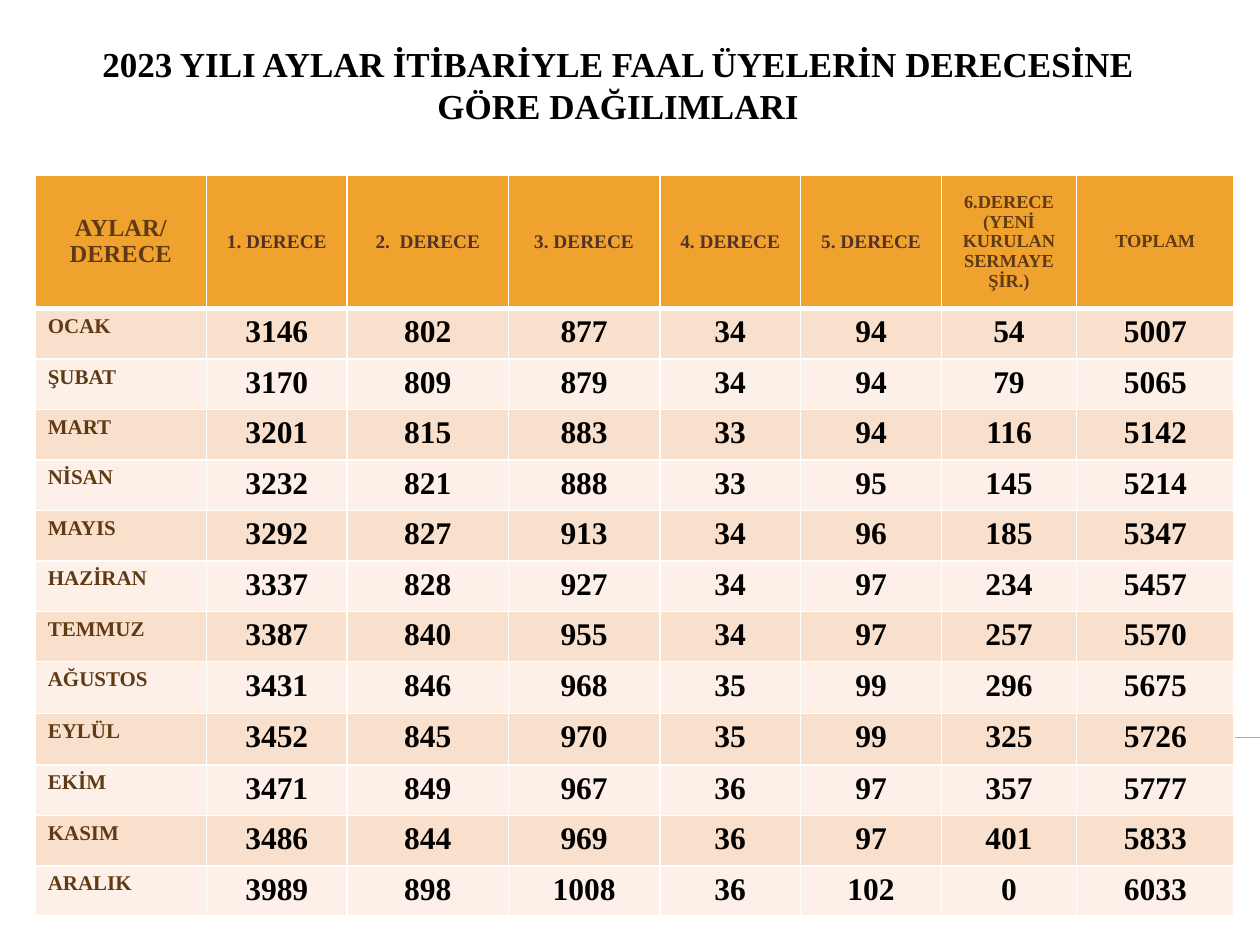
import pptx
import pptx.dml.color
import pptx.enum.shapes
import pptx.enum.text
import pptx.oxml
import pptx.oxml.ns
import pptx.util

Cm = pptx.util.Cm
Pt = pptx.util.Pt
ALIGN = pptx.enum.text.PP_ALIGN
ANCHOR = pptx.enum.text.MSO_ANCHOR

FONT = "Times New Roman"
ORANGE, BROWN, DARK_BROWN = "F0A22E", "603A14", "523227"
BLACK, WHITE = "000000", "FFFFFF"
BANDS = ("F9E0CD", "FCF0E8")

TITLE = "2023 YILI AYLAR İTİBARİYLE FAAL ÜYELERİN DERECESİNE GÖRE DAĞILIMLARI"
COL_WIDTHS = (3.45, 2.84, 3.25, 3.05, 2.84, 2.84, 2.72, 3.18)
HEADER_HEIGHT, ROW_HEIGHT, TALL_ROW_HEIGHT = 2.68, 0.98, 1.04
TALL_MONTHS = ("AĞUSTOS", "EYLÜL")
HEADERS = (
    ("AYLAR/ DERECE", 14, BROWN),
    ("1. DERECE", 11, DARK_BROWN),
    ("2.  DERECE", 11, DARK_BROWN),
    ("3. DERECE", 11, DARK_BROWN),
    ("4. DERECE", 11, DARK_BROWN),
    ("5. DERECE", 11, DARK_BROWN),
    ("6.DERECE (YENİ KURULAN SERMAYE ŞİR.)", 10.5, BROWN),
    ("TOPLAM", 10.5, BROWN),
)
MONTHS = (
    ("OCAK", 3146, 802, 877, 34, 94, 54, 5007),
    ("ŞUBAT", 3170, 809, 879, 34, 94, 79, 5065),
    ("MART", 3201, 815, 883, 33, 94, 116, 5142),
    ("NİSAN", 3232, 821, 888, 33, 95, 145, 5214),
    ("MAYIS", 3292, 827, 913, 34, 96, 185, 5347),
    ("HAZİRAN", 3337, 828, 927, 34, 97, 234, 5457),
    ("TEMMUZ", 3387, 840, 955, 34, 97, 257, 5570),
    ("AĞUSTOS", 3431, 846, 968, 35, 99, 296, 5675),
    ("EYLÜL", 3452, 845, 970, 35, 99, 325, 5726),
    ("EKİM", 3471, 849, 967, 36, 97, 357, 5777),
    ("KASIM", 3486, 844, 969, 36, 97, 401, 5833),
    ("ARALIK", 3989, 898, 1008, 36, 102, 0, 6033),
)


def rgb(color):
    """Turn a hex string into a colour."""
    return pptx.dml.color.RGBColor.from_string(color)


def write(tf, text, size, color, align, spacing=None):
    """Write one bold paragraph into a text frame."""
    p = tf.paragraphs[0]
    p.alignment = align
    if spacing:
        p.line_spacing = spacing
    r = p.add_run()
    r.text = text
    r.font.name = FONT
    r.font.size = Pt(size)
    r.font.bold = True
    r.font.color.rgb = rgb(color)


def add_rule(s, left, right, y):
    """Add the thin horizontal rule that runs behind the table."""
    cxn = s.shapes.add_connector(
        pptx.enum.shapes.MSO_CONNECTOR.STRAIGHT, Cm(left), Cm(y), Cm(right), Cm(y))
    cxn.line.color.rgb = rgb(ORANGE)
    cxn.line.width = Pt(0.75)
    pptx.oxml.ns.qn("a:effectLst")
    cxn._element.spPr.append(pptx.oxml.parse_xml(
        f'<a:effectLst {pptx.oxml.ns.nsdecls("a")}/>'))


def add_title(s):
    """Add the slide title."""
    sp = s.shapes.add_textbox(Cm(0.71), Cm(0.74), Cm(23.5), Cm(1.6))
    sp.text_frame.word_wrap = True
    write(sp.text_frame, TITLE, 20, BLACK, ALIGN.CENTER)


def style_cell(cell, fill, top=1, bottom=1):
    """Fill a cell and give it white borders, widths in points."""
    tcPr = cell._tc.get_or_add_tcPr()
    for side, width in (("L", 1), ("R", 1), ("T", top), ("B", bottom)):
        tcPr.append(pptx.oxml.parse_xml(
            f'<a:ln{side} {pptx.oxml.ns.nsdecls("a")} w="{Pt(width)}">'
            f'<a:solidFill><a:srgbClr val="{WHITE}"/></a:solidFill></a:ln{side}>'))
    cell.fill.solid()
    cell.fill.fore_color.rgb = rgb(fill)


def add_table(s):
    """Add the table of members by month and degree."""
    heights = [HEADER_HEIGHT] + [
        TALL_ROW_HEIGHT if month[0] in TALL_MONTHS else ROW_HEIGHT for month in MONTHS]
    table = s.shapes.add_table(
        len(heights), len(COL_WIDTHS), Cm(0.71), Cm(3.54),
        Cm(sum(COL_WIDTHS)), Cm(sum(heights))).table
    for column, width in zip(table.columns, COL_WIDTHS):
        column.width = Cm(width)
    for row, height in zip(table.rows, heights):
        row.height = Cm(height)
    for col, (text, size, color) in enumerate(HEADERS):
        cell = table.cell(0, col)
        cell.vertical_anchor = ANCHOR.MIDDLE
        style_cell(cell, ORANGE, bottom=3)
        write(cell.text_frame, text, size, color, ALIGN.CENTER, 0.96)
    for row, month in enumerate(MONTHS, 1):
        for col, value in enumerate(month):
            cell = table.cell(row, col)
            style_cell(cell, BANDS[(row - 1) % 2], top=3 if row == 1 else 1)
            if col == 0:
                write(cell.text_frame, value, 12, BROWN, ALIGN.LEFT)
            else:
                write(cell.text_frame, str(value), 18, BLACK, ALIGN.CENTER)


def main():
    """Build the slide and save it."""
    prs = pptx.Presentation()
    prs.slide_width, prs.slide_height = Cm(25.4), Cm(19.05)
    s = prs.slides.add_slide(prs.slide_layouts[6])
    add_rule(s, 1.42, 25.4, 14.86)
    add_title(s)
    add_table(s)
    prs.save("out.pptx")


if __name__ == "__main__":
    main()
